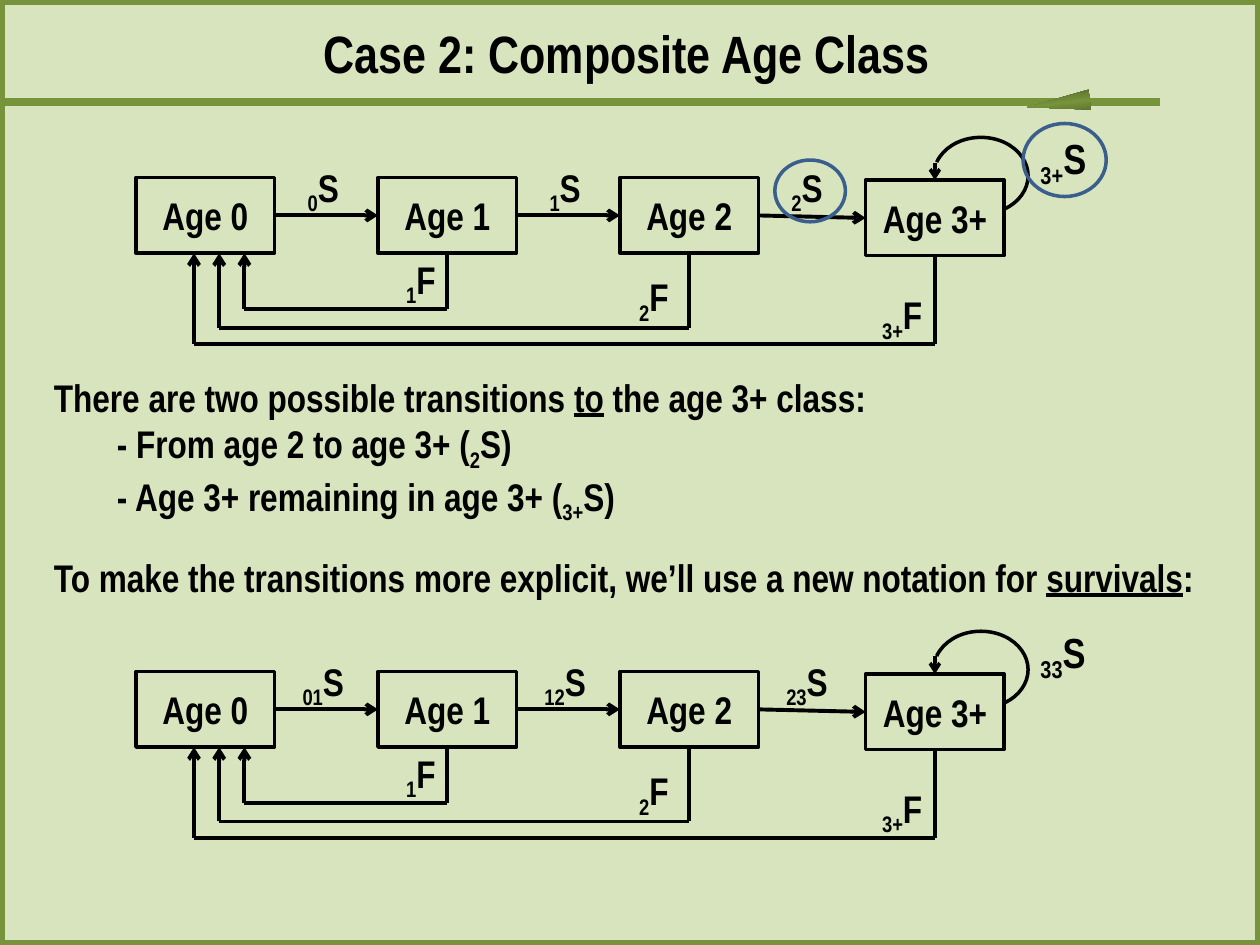
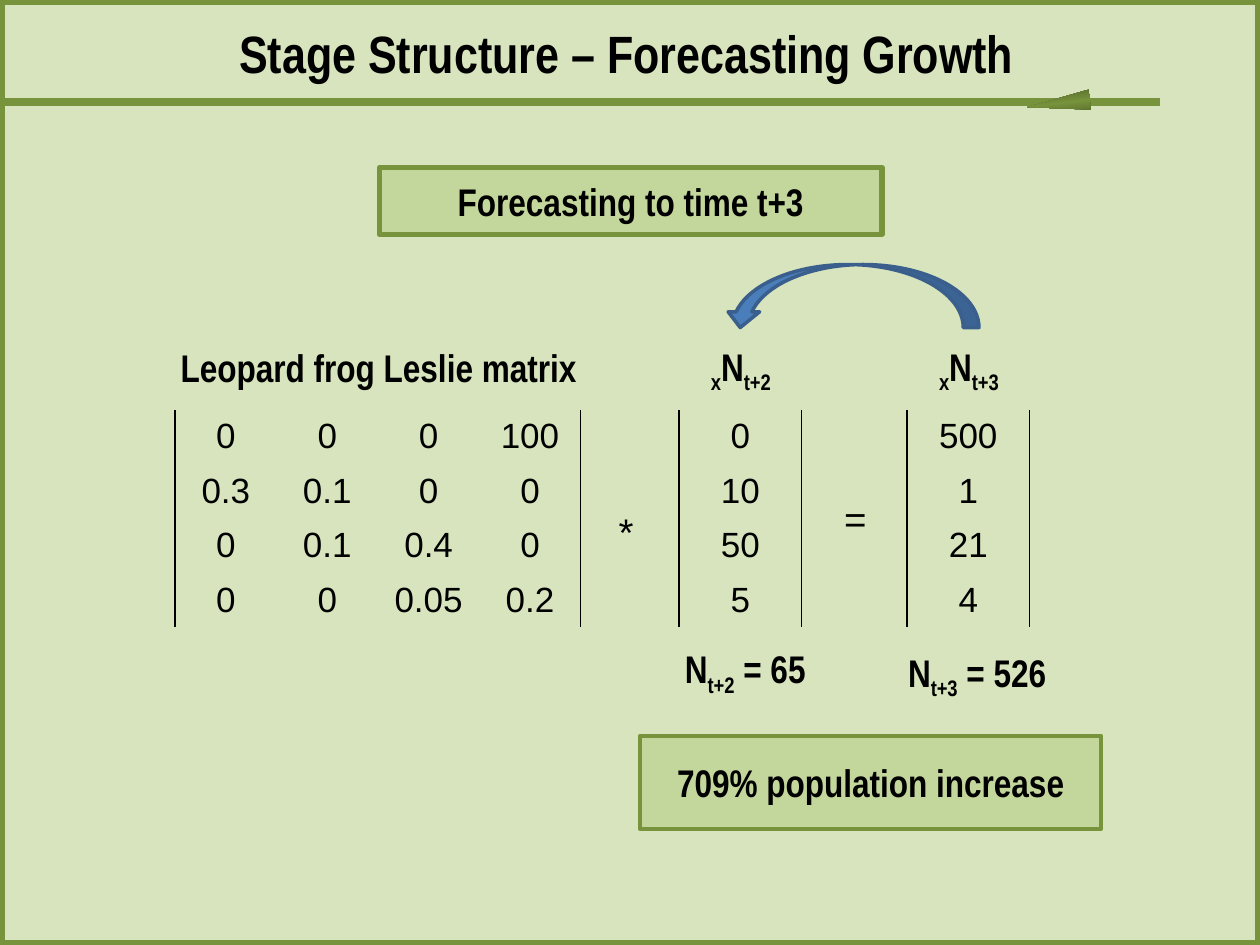
from copy import deepcopy
from dataclasses import dataclass

from lxml.etree import SubElement
from pptx import Presentation
from pptx.dml.color import RGBColor
from pptx.enum.shapes import MSO_CONNECTOR, MSO_SHAPE
from pptx.enum.text import MSO_ANCHOR, MSO_AUTO_SIZE, PP_ALIGN
from pptx.oxml import parse_xml
from pptx.oxml.ns import nsdecls, qn
from pptx.util import Inches, Pt

PALE = RGBColor(0xD7, 0xE4, 0xBD)
LEAF = RGBColor(0xC3, 0xD6, 0x9B)
OLIVE = RGBColor(0x77, 0x93, 0x3C)
MOSS = RGBColor(0x4F, 0x62, 0x28)
BLUE = RGBColor(0x4A, 0x7E, 0xBB)
NAVY = RGBColor(0x3A, 0x5F, 0x8C)
BLACK = RGBColor(0, 0, 0)

COLUMNS, ROWS = 100, 75
CELL = Inches(10) / COLUMNS
TOP, LEFT, BOTTOM, RIGHT = range(4)
PLAIN_TABLE = "{2D5ABB26-0587-4C30-8999-92F81FD0307C}"

HEADING = {"name": "Arial Narrow", "size": Pt(30), "bold": True}
LABEL = {**HEADING, "size": Pt(22)}
LOOP_LABEL = {**HEADING, "size": Pt(24)}
FIGURE = {"name": "Arial", "size": Pt(20)}
OPERATOR = {"name": "Arial", "size": Pt(22)}
NO_MARGINS = dict.fromkeys(("margin_left", "margin_right", "margin_top", "margin_bottom"), 0)

LESLIE = [["0", "0", "0", "100"], ["0.3", "0.1", "0", "0"],
          ["0", "0.1", "0.4", "0"], ["0", "0", "0.05", "0.2"]]


def grid(count):
    """Turn a number of grid cells into a length."""
    return round(count * CELL)


@dataclass
class Box:
    """A region of the slide, in grid columns and rows."""
    left: float
    top: float
    width: float
    height: float

    def region(self, x, y, width, height):
        """Give a region placed relative to this one."""
        return Box(self.left + x, self.top + y, width, height)

    def lengths(self):
        """Give the four lengths that place a shape."""
        return [grid(n) for n in (self.left, self.top, self.width, self.height)]


PAGE = Box(0, 0, COLUMNS, ROWS)


def assign(target, values):
    """Set each named format value on the target."""
    for name, value in values.items():
        setattr(target, name, value)


def write(paragraph, text, style, align=PP_ALIGN.CENTER):
    """Write text in which ~ encloses subscripts and _ encloses underlines."""
    paragraph.alignment = align
    for level, piece in enumerate(text.split("~")):
        for mark, words in enumerate(piece.split("_")):
            if not words:
                continue
            run = paragraph.add_run()
            run.text = words
            assign(run.font, style)
            run.font.color.rgb = BLACK
            if level % 2:
                run._r.get_or_add_rPr().set("baseline", "-25000")
            if mark % 2:
                run.font.underline = True


def add_text(slide, box, *lines, style=LABEL, align=PP_ALIGN.CENTER):
    """Add a text box and give its paragraphs."""
    frame = slide.shapes.add_textbox(*box.lengths()).text_frame
    assign(frame, {"word_wrap": True, "auto_size": MSO_AUTO_SIZE.SHAPE_TO_FIT_TEXT})
    for index, line in enumerate(lines):
        write(frame.add_paragraph() if index else frame.paragraphs[0], line, style, align)
    return frame.paragraphs


def add_figure(slide, kind, box, fill=None, line=BLACK, weight=2, text="", flip=None):
    """Add a preset shape, with centred text if there is any."""
    figure = slide.shapes.add_shape(kind, *box.lengths())
    figure.shadow.inherit = False
    if fill is None:
        figure.fill.background()
    else:
        figure.fill.solid()
        figure.fill.fore_color.rgb = fill
    if line is None:
        figure.line.fill.background()
    else:
        figure.line.width = Pt(weight)
        figure.line.color.rgb = line
    if flip:
        figure._element.spPr.find(qn("a:xfrm")).set(flip, "1")
    if text:
        frame = figure.text_frame
        assign(frame, {**NO_MARGINS, "word_wrap": True, "vertical_anchor": MSO_ANCHOR.MIDDLE})
        write(frame.paragraphs[0], text, LABEL)
    return figure


def add_line(slide, start, end, color=BLACK, weight=2.25, arrow=False):
    """Add a straight connector between two grid points."""
    line = slide.shapes.add_connector(
        MSO_CONNECTOR.STRAIGHT, *(grid(n) for n in (*start, *end)))
    line.line.width = Pt(weight)
    line.line.color.rgb = color
    properties = line._element.spPr
    if arrow:
        SubElement(properties.find(qn("a:ln")), qn("a:tailEnd"), type="arrow")
    SubElement(properties, qn("a:effectLst"))
    return line


def add_page(deck, title):
    """Add a slide with the border, title rule, marker and title."""
    slide = deck.slides.add_slide(deck.slide_layouts[6])
    add_line(slide, (0, 8.1), (92.1, 8.1), OLIVE, 5)
    add_figure(slide, MSO_SHAPE.RECTANGLE, PAGE, line=OLIVE, weight=6)
    marker = add_figure(slide, MSO_SHAPE.ISOSCELES_TRIANGLE,
                        PAGE.region(83.2, 5.7, 1.6, 5), line=None)
    marker.rotation = 263.2
    marker.fill.gradient()
    marker.fill.gradient_angle = 180
    stops = marker._element.spPr.find(qn("a:gradFill")).find(qn("a:gsLst"))
    stops.insert(1, deepcopy(stops[0]))
    for stop, position, color in zip(marker.fill.gradient_stops, (0, 0.5, 1), (MOSS, OLIVE, MOSS)):
        stop.position = position
        stop.color.rgb = color
    add_text(slide, PAGE.region(7.4, 1.2, 84.7, 6.1), title, style=HEADING)
    return slide


def add_life_cycle(slide, box, survivals, loop_survival):
    """Draw the four age classes with their survivals and fecundities."""
    ages = [box.region(x, y, 11, 6) for x, y in ((0, 4.1), (19.2, 4.1), (38.4, 4.1), (57.9, 4.3))]
    names = ("Age 0", "Age 1", "Age 2", "Age 3+")
    classes = [add_figure(slide, MSO_SHAPE.RECTANGLE, age, text=name)
               for age, name in zip(ages, names)]

    for index, survival in enumerate(survivals):
        arrow = add_line(slide, (0, 0), (1, 1), arrow=True)
        arrow.begin_connect(classes[index], RIGHT)
        arrow.end_connect(classes[index + 1], LEFT)
        add_text(slide, ages[index].region(11.75, -1.6, 6.2, 4.7), f"~{survival}~S")

    newborn_bottom = box.top + 10.1
    fecundities = (("1", 0.3, 14.5), ("2", -0.4, 16), ("3+", -0.2, 17.3))
    for index, (parent, shift, depth) in enumerate(fecundities):
        age = ages[index + 1]
        middle = age.left + age.width / 2
        entry = box.left + 8.6 - 2 * index
        level = box.top + depth
        add_line(slide, (entry, level), (entry, newborn_bottom), arrow=True)
        add_line(slide, (entry, level), (middle, level))
        drop = add_line(slide, (middle, newborn_bottom), (middle, level))
        drop.begin_connect(classes[index + 1], BOTTOM)
        label = Box(age.left + shift, box.top + 9.8 + 1.4 * index, 6.2, 4.7)
        add_text(slide, label, f"~{parent}~F")

    loop = add_figure(slide, MSO_SHAPE.ARC, box.region(63.3, 0.9, 7.5, 6.1), flip="flipV")
    loop.adjustments[0], loop.adjustments[1] = 183.78, 97.69
    oldest = ages[-1]
    middle = oldest.left + oldest.width / 2
    entry = add_line(slide, (middle, box.top + 2.9), (middle, oldest.top), weight=2, arrow=True)
    entry.end_connect(classes[-1], TOP)
    add_text(slide, box.region(70.8, 0, 6, 5), f"~{loop_survival}~S",
             style=LOOP_LABEL, align=PP_ALIGN.LEFT)


def add_matrix(slide, box, rows, style=FIGURE, bars=True):
    """Add a matrix as a table, with bars at its left and right sides."""
    columns = len(rows[0])
    table = slide.shapes.add_table(len(rows), columns, *box.lengths()).table
    assign(table, {"first_row": False, "horz_banding": False})
    table._tbl.tblPr.find(qn("a:tableStyleId")).text = PLAIN_TABLE
    for y, values in enumerate(rows):
        for x, value in enumerate(values):
            cell = table.cell(y, x)
            assign(cell, {**NO_MARGINS, "vertical_anchor": MSO_ANCHOR.MIDDLE})
            cell.fill.background()
            write(cell.text_frame.paragraphs[0], value, style,
                  PP_ALIGN.CENTER if bars else PP_ALIGN.LEFT)
            if not bars:
                cell.margin_left = grid(1)
                continue
            for side, edge in (("lnR", columns - 1), ("lnL", 0)):
                if x == edge:
                    cell._tc.get_or_add_tcPr().insert(0, parse_xml(
                        f'<a:{side} {nsdecls("a")} w="12700"><a:solidFill>'
                        f'<a:srgbClr val="{BLACK}"/></a:solidFill></a:{side}>'))


def add_composite_age_class(deck):
    """Build the slide that compares two notations for survival."""
    slide = add_page(deck, "Case 2: Composite Age Class")
    cycle = PAGE.region(10.8, 10, 78, 17.5)
    add_life_cycle(slide, cycle, ("0", "1", "2"), "3+")
    transitions = add_text(
        slide, PAGE.region(3.3, 29.2, 87.8, 12.1),
        "There are two possible transitions _to_ the age 3+ class:",
        "- From age 2 to age 3+ (~2~S)",
        "- Age 3+ remaining in age 3+ (~3+~S)", align=PP_ALIGN.LEFT)
    for transition in transitions[1:]:
        transition._p.get_or_add_pPr().set("marL", str(grid(5)))
    add_text(slide, PAGE.region(3.3, 43.5, 93.7, 4.7),
             "To make the transitions more explicit, we’ll use a new notation for _survivals_:",
             align=PP_ALIGN.LEFT)
    add_life_cycle(slide, PAGE.region(10.8, 49.2, 78, 17.5), ("01", "12", "23"), "33")
    for ring in (cycle.region(50.7, 2.7, 5.6, 4.9), cycle.region(70.4, -0.2, 6.6, 5.8)):
        add_figure(slide, MSO_SHAPE.OVAL, ring, line=NAVY)


def add_forecasting_growth(deck):
    """Build the slide that projects the population one step ahead."""
    slide = add_page(deck, "Stage Structure – Forecasting Growth")
    add_text(slide, PAGE.region(10.8, 26.8, 38.5, 4.7), "Leopard frog Leslie matrix")
    product = PAGE.region(13.9, 32.5, 67.8, 17.3)
    add_matrix(slide, product.region(0, 0, 32.2, 17.3), LESLIE)
    vectors = ((40, "t+2", ("0", "10", "50", "5"), "65", 36.9, 18.2),
               (58.1, "t+3", ("500", "1", "21", "4"), "526", 55.3, 18.5))
    for left, time, counts, total, total_left, total_top in vectors:
        add_matrix(slide, product.region(left, 0, 9.7, 17.3), [[count] for count in counts])
        add_text(slide, product.region(left - 0.6, -5.8, 11, 4.7), f"~x~N~{time}~")
        add_text(slide, product.region(total_left, total_top, 16.7, 4.7), f"N~{time}~ = {total}")
    for left, top, width, sign in ((34.2, 7.3, 3.3, "*"), (52.1, 6.3, 2.5, "=")):
        add_matrix(slide, product.region(left, top, width, 5), [[sign]], OPERATOR, bars=False)
    add_figure(slide, MSO_SHAPE.CURVED_DOWN_ARROW, PAGE.region(57.5, 21, 20.2, 5),
               fill=BLUE, line=NAVY, flip="flipH")
    add_figure(slide, MSO_SHAPE.RECTANGLE, PAGE.region(30.1, 13.3, 39.9, 5.3),
               LEAF, OLIVE, 3, "Forecasting to time t+3")
    add_figure(slide, MSO_SHAPE.RECTANGLE, PAGE.region(50.8, 58.4, 36.6, 7.4),
               LEAF, OLIVE, 2.25, "709% population increase")


def main():
    """Build both slides and save them."""
    deck = Presentation()
    deck.slide_width, deck.slide_height = grid(COLUMNS), grid(ROWS)
    backdrop = deck.slide_master.background.fill
    backdrop.solid()
    backdrop.fore_color.rgb = PALE
    add_composite_age_class(deck)
    add_forecasting_growth(deck)
    deck.save("out.pptx")


if __name__ == "__main__":
    main()
